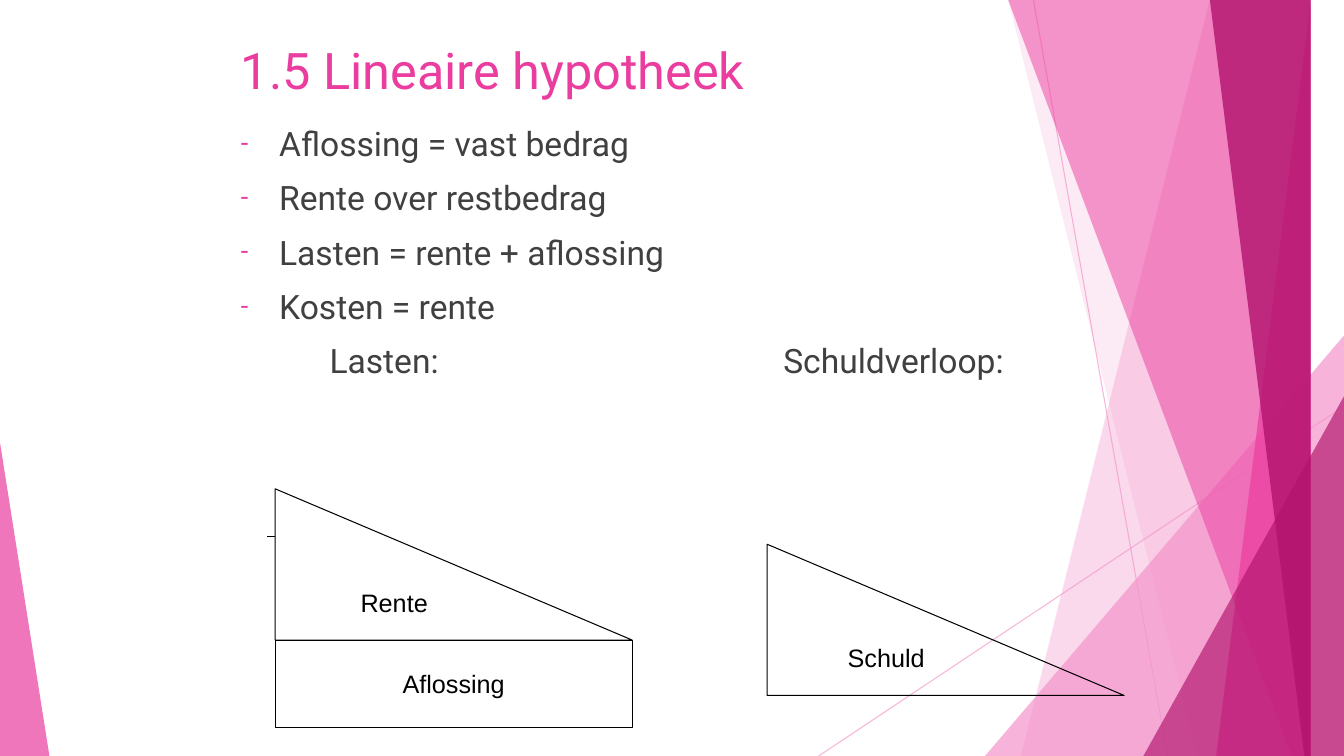
from collections import namedtuple

from lxml import etree
from pptx import Presentation
from pptx.dml.color import RGBColor
from pptx.enum.shapes import MSO_CONNECTOR, MSO_SHAPE
from pptx.enum.text import MSO_ANCHOR, PP_ALIGN
from pptx.oxml.ns import qn
from pptx.util import Inches, Pt

STRAIGHT = MSO_CONNECTOR.STRAIGHT
RECTANGLE = MSO_SHAPE.RECTANGLE
TRIANGLE = MSO_SHAPE.ISOSCELES_TRIANGLE
RIGHT_TRIANGLE = MSO_SHAPE.RIGHT_TRIANGLE
TOP, MIDDLE = MSO_ANCHOR.TOP, MSO_ANCHOR.MIDDLE
LEFT, CENTER = PP_ALIGN.LEFT, PP_ALIGN.CENTER

COLORS = {
    "pale": "F496CB",
    "pink": "EB3D9F",
    "dark": "B2136D",
    "text": "404040",
    "black": "000000",
}
Box = namedtuple("Box", "left top width height")
PAGE = Box(0, 0, 13.33, 7.5)
BULLETS = [
    "Aflossing = vast bedrag",
    "Rente over restbedrag",
    "Lasten = rente + aflossing",
    "Kosten = rente",
]


def paint(color_format, color, opacity=100):
    """Colour a solid fill, with transparency below 100 percent opacity."""
    color_format.solid()
    color_format.fore_color.rgb = RGBColor.from_string(COLORS[color])
    if opacity < 100:
        solid = color_format._xPr.find(qn("a:solidFill"))
        etree.SubElement(solid[0], qn("a:alpha"), val=str(opacity * 1000))


def add_line(page, start, end, color, opacity=100):
    points = [Inches(value) for value in (*start, *end)]
    line = page.shapes.add_connector(STRAIGHT, *points)
    line.line.width = Pt(0.75)
    paint(line.line.fill, color, opacity)
    etree.SubElement(line._element.spPr, qn("a:effectLst"))


def add_facet(shape, color, opacity):
    """Give a decorative shape its transparent fill and no outline."""
    shape.shadow.inherit = False
    shape.line.fill.background()
    paint(shape.fill, color, opacity)


def add_corner(page, box, apex, color, opacity):
    triangle = page.shapes.add_shape(TRIANGLE, *map(Inches, box))
    triangle.adjustments[0] = apex
    add_facet(triangle, color, opacity)


def add_band(page, box, top_left, bottom_left, color, opacity):
    """Fill from a slanted left edge to the right side of the box."""
    right, bottom = box.left + box.width, box.top + box.height
    builder = page.shapes.build_freeform(top_left, box.top, scale=Inches(1))
    builder.add_line_segments([(right, box.top), (right, bottom), (bottom_left, bottom)])
    add_facet(builder.convert_to_shape(), color, opacity)


def add_backdrop(page, box):
    right, bottom = box.left + box.width, box.top + box.height
    bleed = Box(box.left, box.top - 0.01, box.width, box.height + 0.01)

    def right_corner(width, height, color, opacity):
        corner = Box(right - width, bottom - height, width, height)
        add_corner(page, corner, 1, color, opacity)

    add_line(page, (right - 3.08, box.top), (right - 1.75, bottom), "pale", 70)
    add_line(page, (right, bottom - 3.47), (right - 5.21, bottom), "pale", 70)
    add_band(page, bleed, right - 1.05, right - 3.29, "pale", 36)
    add_band(page, bleed, right - 2.83, right - 1.5, "pale", 20)
    right_corner(3.56, 4.17, "pale", 72)
    add_band(page, bleed, right - 3.12, right - 0.42, "pink", 50)
    add_band(page, bleed, right - 0.3, right - 1.41, "pink", 70)
    add_band(page, bleed, right - 1.37, right - 0.15, "dark", 80)
    right_corner(1.99, 3.57, "dark", 66)
    add_corner(page, Box(box.left, bottom - 3.11, 0.49, 3.11), 0, "pink", 70)


def write(para, text, size, color, font="Roboto", align=LEFT, before=0):
    para.alignment = align
    para.space_before = Pt(before)
    span = para.add_run()
    span.text = text
    span.font.name = font
    span.font.size = Pt(size)
    span.font.color.rgb = RGBColor.from_string(COLORS[color])


def add_text_frame(page, box):
    frame = page.shapes.add_textbox(*map(Inches, box)).text_frame
    frame.word_wrap = True
    frame.vertical_anchor = TOP
    return frame


def add_dash(para, indent):
    """Hang the paragraph on a pink dash."""
    props = para._p.get_or_add_pPr()
    props.set("marL", str(Inches(indent)))
    props.set("indent", str(Inches(-indent)))
    color = etree.SubElement(props, qn("a:buClr"))
    etree.SubElement(color, qn("a:srgbClr"), val=COLORS["pink"])
    etree.SubElement(props, qn("a:buSzPct"), val="80000")
    etree.SubElement(props, qn("a:buFont"), typeface="Roboto")
    etree.SubElement(props, qn("a:buChar"), char="-")


def add_tab_stops(para, stops):
    tabs = etree.SubElement(para._p.get_or_add_pPr(), qn("a:tabLst"))
    for stop in stops:
        etree.SubElement(tabs, qn("a:tab"), pos=str(Inches(stop)), algn="l")


def add_title(page, box):
    write(add_text_frame(page, box).paragraphs[0], "1.5 Lineaire hypotheek", 36, "pink")


def add_body(page, box):
    frame = add_text_frame(page, box)
    for index, text in enumerate(BULLETS):
        para = frame.add_paragraph() if index else frame.paragraphs[0]
        write(para, text, 24, "text", before=10)
        add_dash(para, 0.38)
    captions = frame.add_paragraph()
    write(captions, "\tLasten:\tSchuldverloop:", 24, "text", before=10)
    add_tab_stops(captions, [0.88, 5.38])


def add_area(page, kind, box, label):
    area = page.shapes.add_shape(kind, *map(Inches, box))
    area.shadow.inherit = False
    area.fill.background()
    area.line.width = Pt(0.75)
    paint(area.line.fill, "black")
    frame = area.text_frame
    frame.word_wrap = False
    frame.vertical_anchor = MIDDLE
    write(frame.paragraphs[0], label, 18, "black", font="Arial", align=CENTER)


def add_payments_diagram(page, box):
    """Stack the interest triangle on the repayment block."""
    interest = 1.5
    tick = box.top + 0.47
    add_line(page, (box.left, tick), (box.left - 0.08, tick), "black")
    block = Box(box.left, box.top + interest, box.width, box.height - interest)
    add_area(page, RECTANGLE, block, "Aflossing")
    add_area(page, RIGHT_TRIANGLE, box._replace(height=interest), "Rente")


def add_debt_diagram(page, box):
    add_area(page, RIGHT_TRIANGLE, box, "Schuld")


def main():
    deck = Presentation()
    deck.slide_width, deck.slide_height = Inches(PAGE.width), Inches(PAGE.height)
    page = deck.slides.add_slide(deck.slide_layouts[6])
    add_backdrop(page, PAGE)
    add_title(page, Box(2.29, 0.34, 7.26, 1.45))
    add_body(page, Box(2.29, 1.17, 8.71, 5.96))
    add_payments_diagram(page, Box(2.73, 4.85, 3.54, 2.37))
    add_debt_diagram(page, Box(7.61, 5.4, 3.54, 1.5))
    deck.save("out.pptx")


if __name__ == "__main__":
    main()
